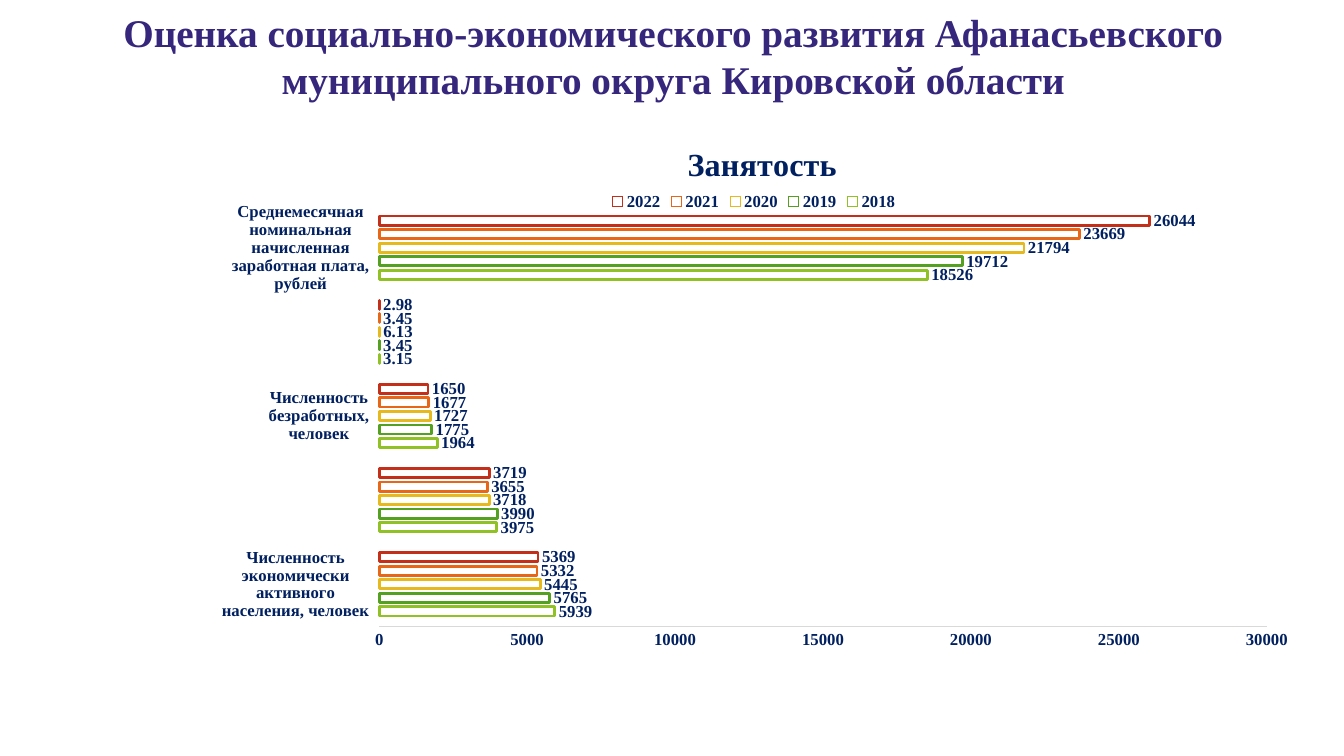
from dataclasses import dataclass

from lxml import etree
from pptx import Presentation
from pptx.chart import data as cd
from pptx.dml.color import RGBColor
from pptx.enum import chart as ch, text as tx
from pptx.oxml import ns
from pptx.util import Cm, Pt

FONT = "Times New Roman"
PURPLE = RGBColor(0x36, 0x26, 0x7C)
NAVY = RGBColor(0x00, 0x20, 0x60)
GREY = RGBColor(0xD9, 0xD9, 0xD9)
LIME = RGBColor(0x90, 0xC2, 0x26)
GREEN = RGBColor(0x54, 0xA0, 0x21)
YELLOW = RGBColor(0xE6, 0xB9, 0x1E)
ORANGE = RGBColor(0xE7, 0x66, 0x18)
RED = RGBColor(0xC4, 0x2F, 0x1A)


@dataclass
class Year:
    name: str
    values: tuple[float, ...]
    color: RGBColor


CATEGORIES = (
    "Численность экономически активного населения, человек",
    "Среднегодовая численность занятых в экономике (включая лиц, "
    "занятых в личном подсобном хозяйстве), человек",
    "Численность безработных, человек",
    "Уровень безработицы, среднегодовая, %",
    "Среднемесячная номинальная начисленная заработная плата, рублей",
)
YEARS = (
    Year("2018", (5939, 3975, 1964, 3.15, 18526), LIME),
    Year("2019", (5765, 3990, 1775, 3.45, 19712), GREEN),
    Year("2020", (5445, 3718, 1727, 6.13, 21794), YELLOW),
    Year("2021", (5332, 3655, 1677, 3.45, 23669), ORANGE),
    Year("2022", (5369, 3719, 1650, 2.98, 26044), RED),
)


def set_font(font, size: float = 12, color: RGBColor = NAVY) -> None:
    font.name, font.size, font.bold = FONT, Pt(size), True
    font.color.rgb = color


def write(tf, text: str, *, size: float, color: RGBColor) -> None:
    p = tf.paragraphs[0]
    p.alignment = tx.PP_ALIGN.CENTER
    r = p.add_run()
    r.text = text
    set_font(r.font, size, color)


def set_layout(parent, before: tuple[str, ...], inner: bool = False, **box: float) -> None:
    """Place a chart part by fractions of the chart area."""
    for old in parent.findall(ns.qn("c:layout")):
        parent.remove(old)
    layout = etree.Element(ns.qn("c:layout"))
    manual = etree.SubElement(layout, ns.qn("c:manualLayout"))
    settings = [("layoutTarget", "inner")] if inner else []
    settings += [("xMode", "edge"), ("yMode", "edge")]
    settings += [(key, str(value)) for key, value in box.items()]
    for tag, value in settings:
        etree.SubElement(manual, ns.qn(f"c:{tag}")).set("val", value)
    tags = [ns.qn(f"c:{tag}") for tag in before]
    index = next(i for i, child in enumerate(parent) if child.tag in tags)
    parent.insert(index, layout)


def add_employment_chart(s) -> None:
    data = cd.CategoryChartData()
    data.categories = CATEGORIES
    for year in YEARS:
        data.add_series(year.name, year.values)
    chart = s.shapes.add_chart(ch.XL_CHART_TYPE.BAR_CLUSTERED, Cm(5.59), Cm(2.9),
                               Cm(26.9), Cm(14.27), data).chart
    set_font(chart.font, 10)

    # Heading and legend
    chart.has_title = True
    write(chart.chart_title.text_frame, "Занятость", size=23, color=NAVY)
    chart.chart_title.include_in_layout = False
    set_layout(chart.chart_title._element, ("overlay",), x=0.43, y=0.04)
    chart.has_legend = True
    chart.legend.position = ch.XL_LEGEND_POSITION.TOP
    chart.legend.include_in_layout = False
    set_font(chart.legend.font)
    set_layout(chart.legend._element, ("overlay",), x=0.36, y=0.13)

    # Axes
    for axis in (chart.category_axis, chart.value_axis):
        axis.has_major_gridlines = False
        axis.minor_tick_mark = ch.XL_TICK_MARK.NONE
        set_font(axis.tick_labels.font)
    chart.category_axis.major_tick_mark = ch.XL_TICK_MARK.OUTSIDE
    chart.category_axis.format.line.fill.background()
    axis = chart.value_axis
    axis.major_tick_mark = ch.XL_TICK_MARK.NONE
    axis.minimum_scale, axis.maximum_scale, axis.major_unit = 0, 30000, 5000
    axis.format.line.color.rgb = GREY
    axis.format.line.width = Pt(0.75)

    # Outlined bars with values
    plot = chart.plots[0]
    plot.gap_width, plot.overlap, plot.vary_by_categories = 227, -48, False
    set_layout(plot._element.getparent(), ("barChart",), inner=True,
               x=0.146, y=0.16, w=0.833, h=0.743)
    for series, year in zip(plot.series, YEARS):
        series.format.fill.background()
        series.format.line.color.rgb = year.color
        series.format.line.width = Pt(2)
        labels = series.data_labels
        labels.show_value = True
        labels.position = ch.XL_LABEL_POSITION.OUTSIDE_END
        set_font(labels.font)


def main() -> None:
    prs = Presentation()
    prs.slide_width, prs.slide_height = Cm(33.87), Cm(19.05)
    s = prs.slides.add_slide(prs.slide_layouts[5])

    # Slide title
    sp = s.shapes.title
    sp.left, sp.top, sp.width, sp.height = Cm(0.05), Cm(0.08), Cm(33.83), Cm(1.35)
    tf = sp.text_frame
    tf.word_wrap = True
    tf.auto_size = tx.MSO_AUTO_SIZE.NONE
    tf.vertical_anchor = tx.MSO_ANCHOR.TOP
    write(tf, "Оценка социально-экономического развития Афанасьевского "
              "муниципального округа Кировской области", size=28, color=PURPLE)

    add_employment_chart(s)
    prs.save("out.pptx")


if __name__ == "__main__":
    main()
